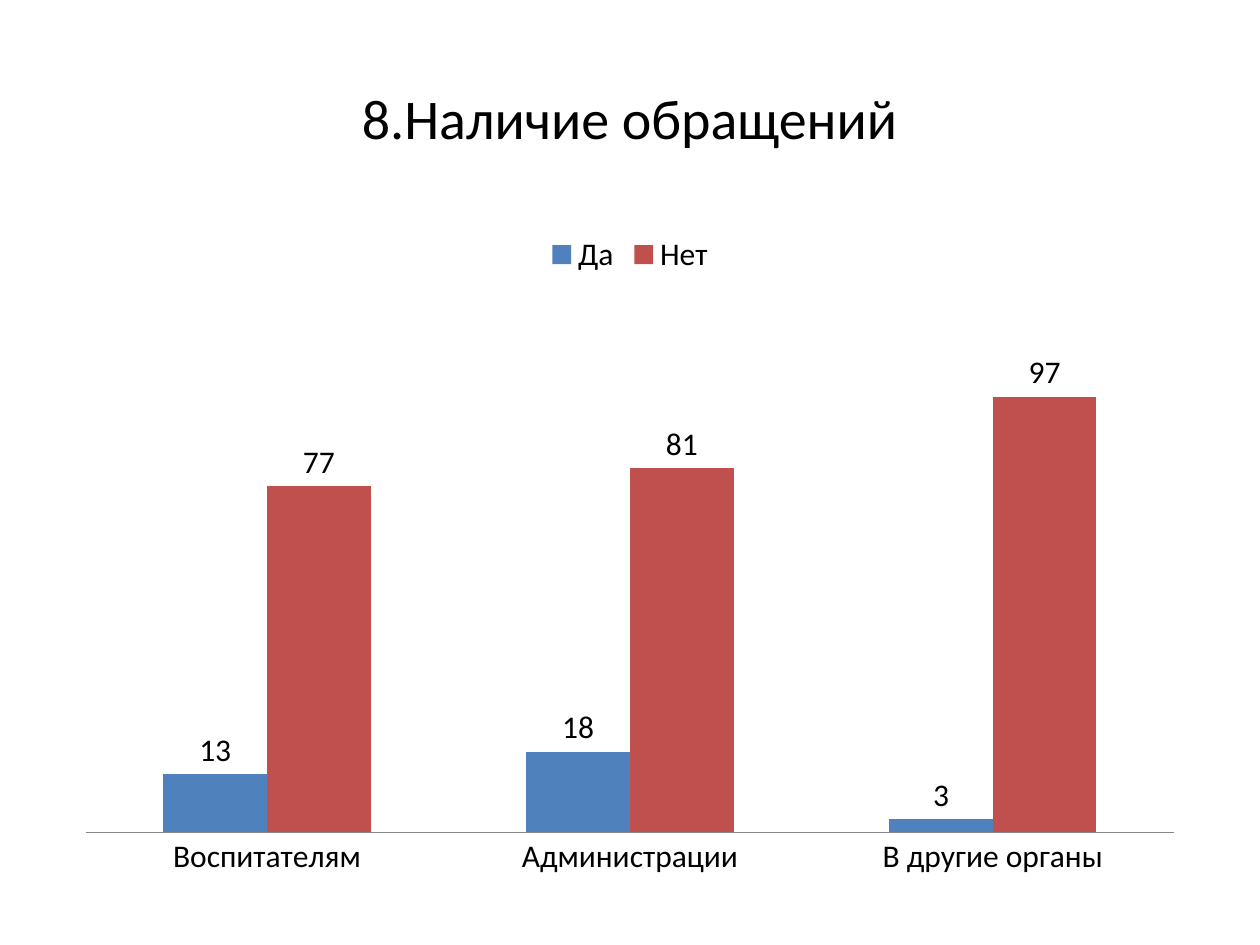
from dataclasses import dataclass

from pptx import Presentation
from pptx import util as u
from pptx.chart.data import CategoryChartData
from pptx.dml.color import RGBColor
from pptx.enum import chart as ch
from pptx.enum import text

SCALE = 914400 / 126


@dataclass(frozen=True)
class Theme:
    font: str = "Calibri"
    head: int = 32
    body: int = 18
    ink: str = "000000"
    axis: str = "868686"
    yes: str = "4F81BD"
    no: str = "C0504D"


@dataclass(frozen=True)
class Box:
    left: int
    top: int
    width: int
    height: int

    def emu(self) -> tuple[int, ...]:
        return tuple(px(n) for n in (self.left, self.top, self.width, self.height))


@dataclass(frozen=True)
class Series:
    name: str
    vals: tuple[int, ...]
    color: str


THEME = Theme()
CATS = ("Воспитателям", "Администрации", "В другие органы")
ROWS = (
    Series("Да", (13, 18, 3), THEME.yes),
    Series("Нет", (77, 81, 97), THEME.no),
)


def px(n: int) -> int:
    return round(n * SCALE)


def style(font, size: int) -> None:
    font.name = THEME.font
    font.size = u.Pt(size)
    font.color.rgb = RGBColor.from_string(THEME.ink)


def title(slide, box: Box, words: str) -> None:
    frame = slide.shapes.add_textbox(*box.emu()).text_frame
    frame.word_wrap = True
    frame.vertical_anchor = text.MSO_ANCHOR.MIDDLE
    para = frame.paragraphs[0]
    para.text = words
    para.alignment = text.PP_ALIGN.CENTER
    style(para.font, THEME.head)


def paint(bars, row: Series) -> None:
    bars.format.fill.solid()
    bars.format.fill.fore_color.rgb = RGBColor.from_string(row.color)
    bars.invert_if_negative = False
    tags = bars.data_labels
    tags.show_value = True
    tags.position = ch.XL_LABEL_POSITION.OUTSIDE_END


def columns(slide, box: Box) -> None:
    data = CategoryChartData()
    data.categories = CATS
    for row in ROWS:
        data.add_series(row.name, row.vals)
    kind = ch.XL_CHART_TYPE.COLUMN_CLUSTERED
    chart = slide.shapes.add_chart(kind, *box.emu(), data).chart
    style(chart.font, THEME.body)
    chart.has_title = False
    chart.has_legend = True
    chart.legend.position = ch.XL_LEGEND_POSITION.TOP
    chart.legend.include_in_layout = False

    base = chart.category_axis
    base.major_tick_mark = ch.XL_TICK_MARK.NONE
    base.format.line.color.rgb = RGBColor.from_string(THEME.axis)
    base.format.line.width = u.Pt(0.75)
    side = chart.value_axis
    side.visible = False
    side.has_major_gridlines = False
    side.minimum_scale = 0
    side.maximum_scale = 120

    plot = chart.plots[0]
    plot.gap_width = 150
    plot.vary_by_categories = False
    for bars, row in zip(plot.series, ROWS):
        paint(bars, row)


def main() -> None:
    deck = Presentation()
    deck.slide_width, deck.slide_height = px(1260), px(945)
    slide = deck.slides.add_slide(deck.slide_layouts[6])
    title(slide, Box(63, 38, 1134, 158), "8.Наличие обращений")
    columns(slide, Box(63, 220, 1134, 669))
    deck.save("out.pptx")


if __name__ == "__main__":
    main()
